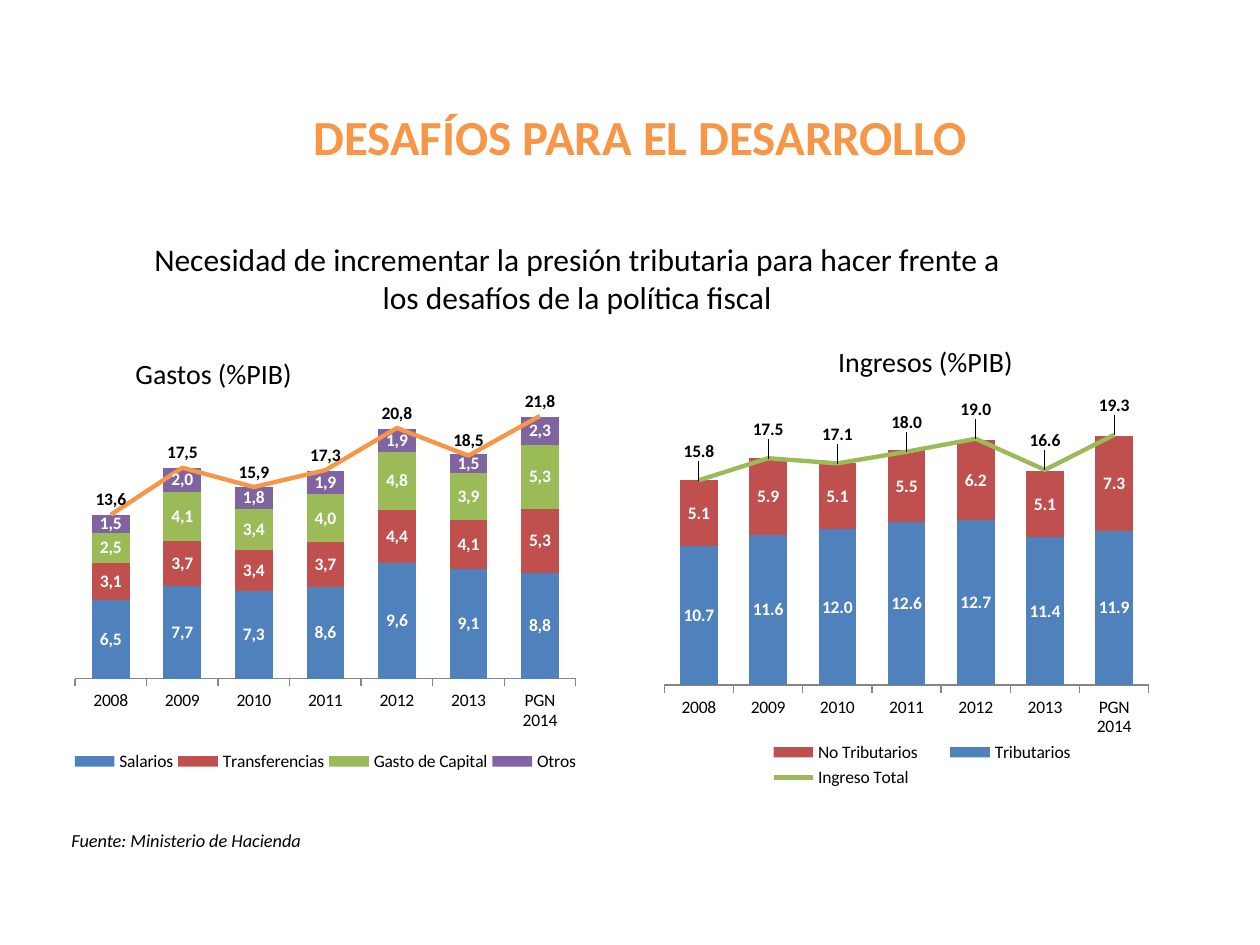
from copy import deepcopy
from dataclasses import dataclass

from pptx import Presentation
from pptx.chart.data import CategoryChartData
from pptx.dml.color import RGBColor
from pptx.enum.chart import (XL_CHART_TYPE, XL_LABEL_POSITION, XL_LEGEND_POSITION,
                             XL_MARKER_STYLE, XL_TICK_MARK)
from pptx.enum.text import PP_ALIGN
from pptx.oxml import parse_xml
from pptx.oxml.ns import nsdecls, qn
from pptx.util import Cm, Pt


@dataclass(frozen=True)
class Theme:
    font: str = "Calibri"
    black: str = "000000"
    white: str = "FFFFFF"
    axis: str = "868686"
    blue: str = "4F81BD"
    red: str = "C0504D"
    green: str = "9BBB59"
    purple: str = "8064A2"
    orange: str = "F79646"
    title: float = 28
    subtitle: float = 18
    heading: float = 16
    source: float = 10.5
    chart: float = 10


THEME = Theme()

# Content: boxes are left, top, width, height in centimetres
TEXTS = [
    dict(text="DESAFÍOS PARA EL DESARROLLO", box=(1.9, 2.51, 22, 1.04),
         size=THEME.title, color=THEME.orange, bold=True, spacing=Pt(20)),
    dict(text="Necesidad de incrementar la presión tributaria para hacer frente a "
              "los desafíos de la política fiscal",
         box=(2.77, 4.72, 17.73, 1.8), size=THEME.subtitle),
    dict(text="Gastos (%PIB)", box=(2.31, 7.06, 3.99, 0.94), size=THEME.heading),
    dict(text="Ingresos (%PIB)", box=(16.46, 6.83, 4.39, 0.94), size=THEME.heading),
    dict(text="Fuente: Ministerio de Hacienda", box=(1.19, 16.59, 5.23, 0.71),
         size=THEME.source, italic=True, align=PP_ALIGN.LEFT, wrap=False),
]

YEARS = ["2008", "2009", "2010", "2011", "2012", "2013", "PGN 2014"]
AXIS_MAXIMUM = 25

# The last series of each chart is the line of totals
CHARTS = [
    dict(
        box=(1.19, 6.53, 10.74, 9.8), gap=90, decimal=",", label_shift=0,
        plot=(0.03, 0.11, 0.94, 0.62), legend=(0.02, 0.87, 0.96, 0.06),
        legend_position=XL_LEGEND_POSITION.BOTTOM, total_in_legend=False,
        shown={("Salarios", 3): "8,6"},
        series=[
            ("Salarios", THEME.blue, [6.5, 7.7, 7.3, 7.6, 9.6, 9.1, 8.8]),
            ("Transferencias", THEME.red, [3.1, 3.7, 3.4, 3.7, 4.4, 4.1, 5.3]),
            ("Gasto de Capital", THEME.green, [2.5, 4.1, 3.4, 4.0, 4.8, 3.9, 5.3]),
            ("Otros", THEME.purple, [1.5, 2.0, 1.8, 1.9, 1.9, 1.5, 2.3]),
            ("Series 5", THEME.orange, [13.6, 17.5, 15.9, 17.3, 20.8, 18.5, 21.8]),
        ]),
    dict(
        box=(13.08, 6.71, 10.39, 9.47), gap=84, decimal=".", label_shift=-0.03,
        plot=(0.03, 0.06, 0.94, 0.69), legend=(0.19, 0.86, 0.68, 0.12),
        legend_position=XL_LEGEND_POSITION.RIGHT, total_in_legend=True, shown={},
        series=[
            ("Tributarios", THEME.blue, [10.7, 11.6, 12.0, 12.6, 12.7, 11.4, 11.9]),
            ("No Tributarios", THEME.red, [5.1, 5.9, 5.1, 5.5, 6.2, 5.1, 7.3]),
            ("Ingreso Total", THEME.green, [15.8, 17.5, 17.1, 18.0, 19.0, 16.6, 19.3]),
        ]),
]


def style_font(font, size, color, bold=False, italic=False):
    font.name, font.size = THEME.font, Pt(size)
    font.bold, font.italic = bold, italic
    font.color.rgb = RGBColor.from_string(color)


def add_text(page, text, box, size, color=THEME.black, bold=False, italic=False,
             align=PP_ALIGN.CENTER, wrap=True, spacing=None):
    frame = page.shapes.add_textbox(*map(Cm, box)).text_frame
    frame.word_wrap = wrap
    paragraph = frame.paragraphs[0]
    paragraph.text, paragraph.alignment = text, align
    if spacing:
        paragraph.line_spacing = spacing
    style_font(paragraph.font, size, color, bold, italic)


def manual_layout(x, y, width=None, height=None, inner=False):
    """Return a chart layout; without a size, x and y are offsets."""
    parts = '<c:layoutTarget val="inner"/>' if inner else ""
    if width is not None:
        parts += '<c:xMode val="edge"/><c:yMode val="edge"/>'
    for tag, value in zip("xywh", (x, y, width, height)):
        if value is not None:
            parts += f'<c:{tag} val="{value}"/>'
    return parse_xml(f'<c:layout {nsdecls("c")}><c:manualLayout>{parts}'
                     '</c:manualLayout></c:layout>')


def move_total_to_line(chart):
    """Turn the last column series into a line on the same axes."""
    bars = chart.plots[0]._element
    total = bars.findall(qn("c:ser"))[-1]
    line = parse_xml(f'<c:lineChart {nsdecls("c")}><c:grouping val="standard"/>'
                     '<c:varyColors val="0"/></c:lineChart>')
    for invert in total.findall(qn("c:invertIfNegative")):
        total.remove(invert)
    line.append(total)
    line.append(parse_xml(f'<c:marker {nsdecls("c")} val="1"/>'))
    for axis in bars.findall(qn("c:axId")):
        line.append(deepcopy(axis))
    bars.addnext(line)


def label_series(series, color, position, options, is_total):
    labels = series.data_labels
    labels.show_value = True
    labels.number_format, labels.number_format_is_linked = "0.0", False
    labels.position = position
    style_font(labels.font, THEME.chart, color, bold=True)
    if options["decimal"] == "." and not is_total:
        return
    for index, value in enumerate(series.values):
        text = f"{value:.1f}".replace(".", options["decimal"])
        label = series.points[index].data_label
        span = label.text_frame.paragraphs[0].add_run()
        span.text = options["shown"].get((series.name, index), text)
        style_font(span.font, THEME.chart, color, bold=True)
        label.position = position
        if is_total and options["label_shift"]:
            entry = labels._element.findall(qn("c:dLbl"))[index]
            for layout in entry.findall(qn("c:layout")):
                entry.remove(layout)
            entry.find(qn("c:idx")).addnext(manual_layout(0, options["label_shift"]))


def style_axes(chart):
    values, years = chart.value_axis, chart.category_axis
    values.minimum_scale, values.maximum_scale = 0, AXIS_MAXIMUM
    values.has_major_gridlines = False
    values.visible = False
    years.major_tick_mark = XL_TICK_MARK.OUTSIDE
    years.format.line.color.rgb = RGBColor.from_string(THEME.axis)


def place_legend(chart, options):
    chart.has_legend = True
    legend = chart.legend
    legend.position = options["legend_position"]
    legend.include_in_layout = False
    for layout in legend._element.findall(qn("c:layout")):
        legend._element.remove(layout)
    anchor = legend._element.find(qn("c:legendPos"))
    anchor.addnext(manual_layout(*options["legend"]))
    if not options["total_in_legend"]:
        anchor.addnext(parse_xml(
            f'<c:legendEntry {nsdecls("c")}><c:idx val="{len(options["series"]) - 1}"/>'
            '<c:delete val="1"/></c:legendEntry>'))


def add_budget_chart(page, options):
    data = CategoryChartData(number_format="0.0")
    data.categories = YEARS
    for name, _, values in options["series"]:
        data.add_series(name, values)
    chart = page.shapes.add_chart(
        XL_CHART_TYPE.COLUMN_STACKED, *map(Cm, options["box"]), data).chart
    chart.has_title = False
    style_font(chart.font, THEME.chart, THEME.black)
    move_total_to_line(chart)
    columns, line = chart.plots
    columns.gap_width, columns.overlap = options["gap"], 100
    columns.vary_by_categories = False

    # Columns, then the line of totals
    colors = [RGBColor.from_string(color) for _, color, _ in options["series"]]
    for series, color in zip(columns.series, colors):
        series.format.fill.solid()
        series.format.fill.fore_color.rgb = color
        label_series(series, THEME.white, XL_LABEL_POSITION.CENTER, options, False)
    total = line.series[0]
    total.smooth = False
    total.marker.style = XL_MARKER_STYLE.NONE
    total.format.line.color.rgb = colors[-1]
    total.format.line.width = Pt(2.5)
    label_series(total, THEME.black, XL_LABEL_POSITION.ABOVE, options, True)

    # Axes, legend and plot area
    style_axes(chart)
    place_legend(chart, options)
    area = columns._element.getparent()
    for layout in area.findall(qn("c:layout")):
        area.remove(layout)
    area.insert(0, manual_layout(*options["plot"], inner=True))


def main():
    deck = Presentation()
    deck.slide_width, deck.slide_height = Cm(25.4), Cm(19.05)
    page = deck.slides.add_slide(deck.slide_layouts[6])
    for options in CHARTS:
        add_budget_chart(page, options)
    for options in TEXTS:
        add_text(page, **options)
    deck.save("out.pptx")


if __name__ == "__main__":
    main()
